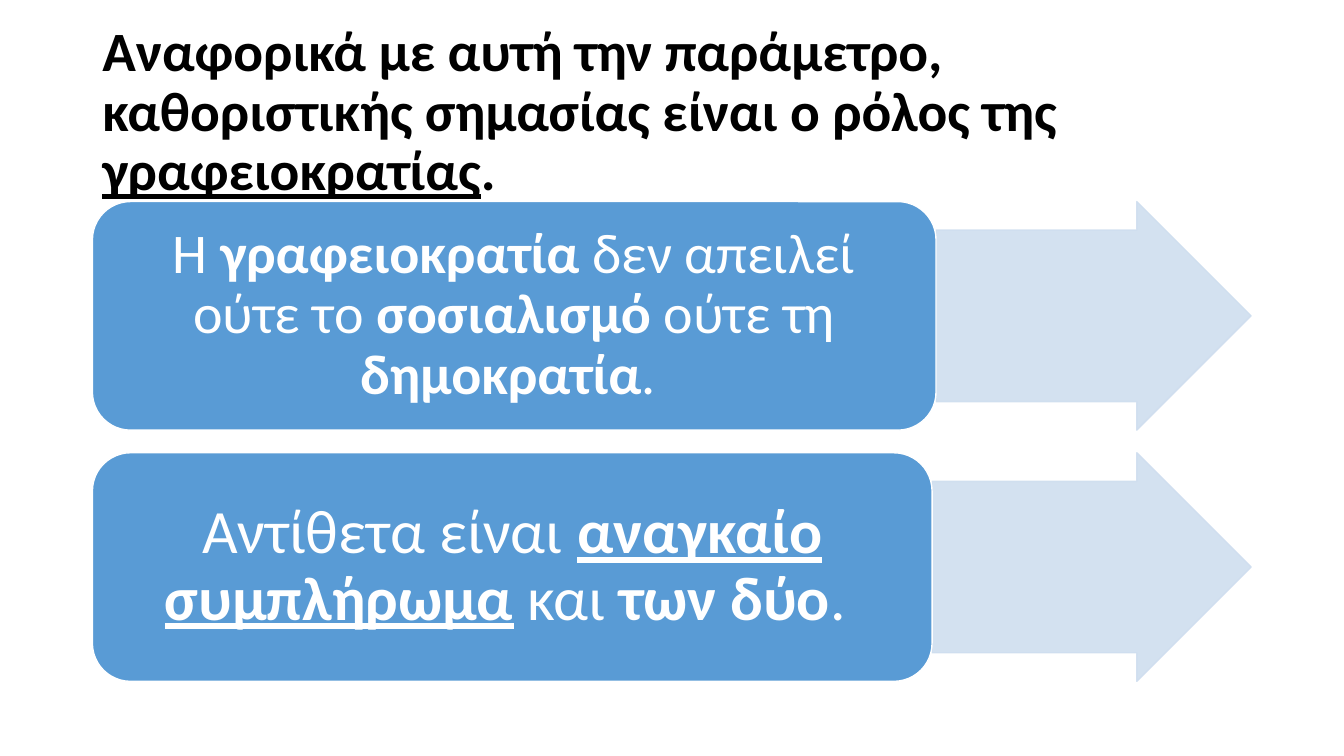
from lxml import etree
from pptx import Presentation
from pptx.dml.color import RGBColor
from pptx.enum.shapes import MSO_SHAPE as Shape
from pptx.enum.text import MSO_ANCHOR as Anchor, MSO_AUTO_SIZE as Fit, PP_ALIGN as Align
from pptx.oxml.ns import qn
from pptx.util import Cm, Pt

BLACK = RGBColor(0x00, 0x00, 0x00)
WHITE = RGBColor(0xFF, 0xFF, 0xFF)
BLUE = RGBColor(0x59, 0x9B, 0xD5)
PALE = RGBColor(0xCF, 0xDE, 0xEF)

LEFT, RIGHT = 2.33, 31.53
TOP, HIGH, STEP = 5.08, 5.76, 6.33

# Runs are (text, style): b is bold, u is underlined
TITLE = [
    ("Αναφορικά με αυτή την παράμετρο, καθοριστικής σημασίας είναι ο ρόλος της ", "b"),
    ("γραφειοκρατίας", "bu"),
    (".", "b"),
]
# Rows are (box width, font size, side inset, runs)
ROWS = [
    (21.26, 40, 0.43, [
        ("Η ", ""), ("γραφειοκρατία ", "b"), ("δεν απειλεί ούτε το ", ""),
        ("σοσιαλισμό", "b"), (" ούτε τη ", ""), ("δημοκρατία", "b"), (". ", ""),
    ]),
    (21.16, 44, 0.46, [
        ("Αντίθετα είναι ", ""), ("αναγκαίο συμπλήρωμα", "bu"), (" και ", ""),
        ("των δύο", "b"), (". ", ""),
    ]),
]


def write(frame, runs, size, color, align, side, edge):
    frame.word_wrap = True
    frame.auto_size = Fit.NONE
    frame.vertical_anchor = Anchor.MIDDLE
    frame.margin_left = frame.margin_right = Cm(side)
    frame.margin_top = frame.margin_bottom = Cm(edge)
    para = frame.paragraphs[0]
    para.alignment = align
    para.line_spacing = 0.9
    para.space_before = Pt(0)
    for text, style in runs:
        run = para.add_run()
        run.text = text
        font = run.font
        font.name = "Calibri"
        font.size = Pt(size)
        font.color.rgb = color
        font.bold = "b" in style
        font.underline = "u" in style


def add_block(slide, kind, left, top, width, fill, line):
    block = slide.shapes.add_shape(kind, Cm(left), Cm(top), Cm(width), Cm(HIGH))
    block.shadow.inherit = False
    block.fill.solid()
    block.fill.fore_color.rgb = fill
    block.line.color.rgb = line
    block.line.width = Pt(1)
    return block


def add_arrow(slide, left, top):
    arrow = add_block(slide, Shape.RIGHT_ARROW, left, top, RIGHT - left, PALE, PALE)
    arrow.adjustments[0] = 0.75
    arrow.adjustments[1] = 0.5
    # Fill and line at 90 % opacity
    for color in arrow.element.spPr.iter(qn("a:srgbClr")):
        etree.SubElement(color, qn("a:alpha")).set("val", "90000")


def add_row(slide, top, width, size, side, runs):
    add_arrow(slide, LEFT + width, top)
    box = add_block(slide, Shape.ROUNDED_RECTANGLE, LEFT, top, width, BLUE, WHITE)
    box.adjustments[0] = 0.167
    write(box.text_frame, runs, size, WHITE, Align.CENTER, side, side / 2)


def main():
    deck = Presentation()
    deck.slide_width, deck.slide_height = Cm(33.87), Cm(19.05)
    slide = deck.slides.add_slide(deck.slide_layouts[5])

    # Title
    title = slide.shapes.title
    title.left, title.top = Cm(LEFT), Cm(1.01)
    title.width, title.height = Cm(RIGHT - LEFT), Cm(3.68)
    write(title.text_frame, TITLE, 39.6, BLACK, Align.LEFT, 0.25, 0.13)

    # Boxes with arrows
    for index, row in enumerate(ROWS):
        add_row(slide, TOP + index * STEP, *row)

    deck.save("out.pptx")


if __name__ == "__main__":
    main()
